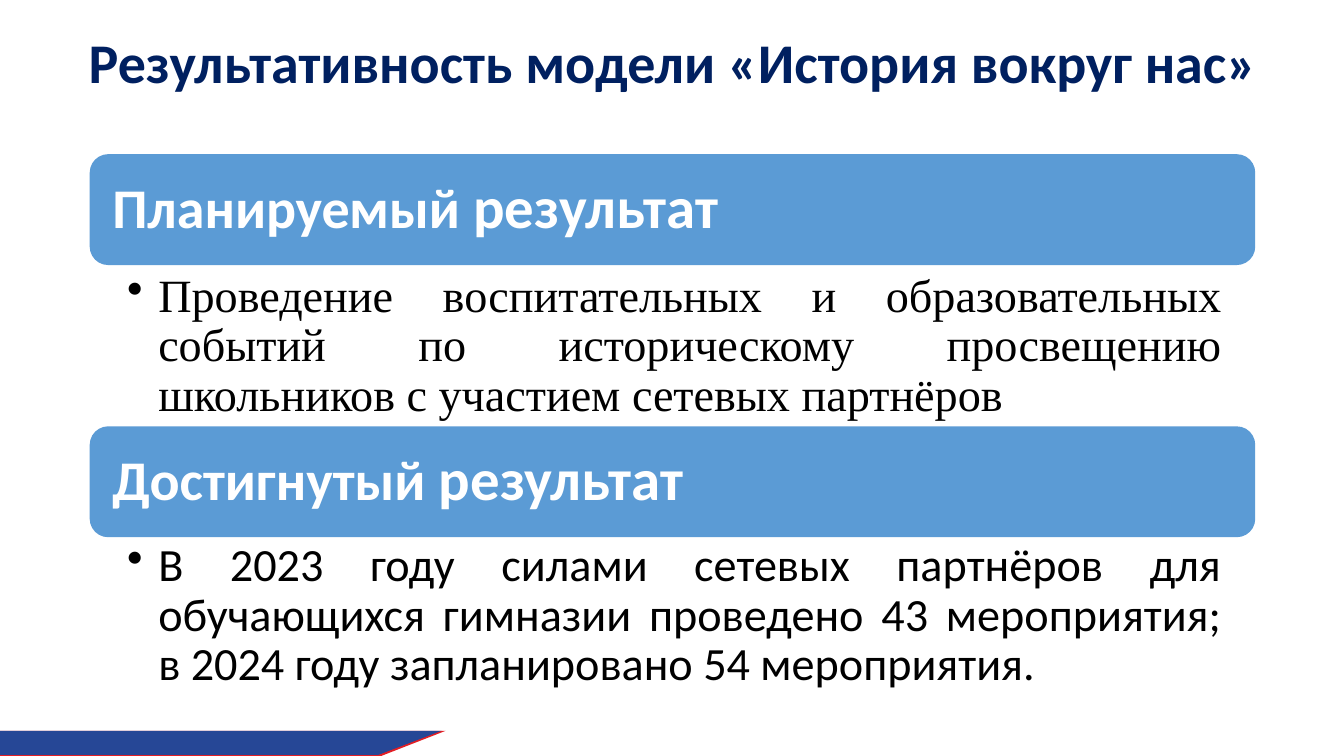
from lxml.etree import SubElement
from pptx import Presentation
from pptx.dml.color import RGBColor
from pptx.enum.shapes import MSO_SHAPE
from pptx.enum.text import MSO_ANCHOR, PP_ALIGN
from pptx.oxml.ns import qn
from pptx.util import Inches, Pt

# Content
TITLE = "Результативность модели «История вокруг нас»"
SECTIONS = [
    {
        "heading": ("Планируемый", " результат"),
        "body": "Проведение воспитательных и образовательных событий по "
                "историческому просвещению школьников с участием сетевых партнёров",
        "font": "Times New Roman", "top": 1.53, "body_top": 2.64, "body_height": 1.57,
    },
    {
        "heading": ("Достигнутый", " результат"),
        "body": "В 2023 году силами сетевых партнёров для обучающихся гимназии "
                "проведено 43 мероприятия; в 2024 году запланировано 54 мероприятия.",
        "font": "Calibri", "top": 4.23, "body_top": 5.31, "body_height": 1.66,
    },
]

# Colours
NAVY = RGBColor(0x00, 0x20, 0x60)
BLUE = RGBColor(0x5B, 0x9B, 0xD5)
WHITE = RGBColor(0xFF, 0xFF, 0xFF)
BLACK = RGBColor(0x00, 0x00, 0x00)
FOOTER_RED = RGBColor(0xE3, 0x1E, 0x24)
FOOTER_BLUE = RGBColor(0x26, 0x47, 0x96)

# Layout: footer bands are colour, top right, bottom right, bottom
FOOTER_TOP = 7.25
FOOTER_BANDS = [(FOOTER_RED, 4.42, 3.78, 7.5), (FOOTER_BLUE, 4.38, 3.75, 7.49)]
LEFT, WIDTH, BAR_HEIGHT = 0.89, 11.56, 1.1
BULLET_INDENT = 0.31

# Formats
TITLE_FORMAT = {"name": "Calibri", "size": Pt(40), "bold": True}
HEADING_SIZES = (40, 42)
BODY_SIZE = 33


def set_fill(shape, color):
    shape.shadow.inherit = False
    shape.fill.solid()
    shape.fill.fore_color.rgb = color
    shape.line.fill.background()


def set_frame(frame, anchor, left, top, right, bottom):
    values = {
        "word_wrap": True, "vertical_anchor": anchor,
        "margin_left": Inches(left), "margin_top": Inches(top),
        "margin_right": Inches(right), "margin_bottom": Inches(bottom),
    }
    for name, value in values.items():
        setattr(frame, name, value)


def add_run(paragraph, text, color, font_format):
    run = paragraph.add_run()
    run.text = text
    run.font.color.rgb = color
    for name, value in font_format.items():
        setattr(run.font, name, value)


def start_paragraph(frame, alignment):
    paragraph = frame.paragraphs[0]
    paragraph.alignment = alignment
    paragraph.line_spacing = 0.9
    return paragraph


def add_bullet(paragraph):
    properties = paragraph._p.get_or_add_pPr()
    properties.set("marL", str(Inches(BULLET_INDENT)))
    properties.set("indent", str(-Inches(BULLET_INDENT)))
    SubElement(properties, qn("a:buChar")).set("char", "•")


def add_footer(slide):
    for color, top_right, bottom_right, bottom in FOOTER_BANDS:
        builder = slide.shapes.build_freeform(0, Inches(FOOTER_TOP))
        corners = [(top_right, FOOTER_TOP), (bottom_right, bottom), (0, bottom)]
        builder.add_line_segments([(Inches(x), Inches(y)) for x, y in corners])
        set_fill(builder.convert_to_shape(), color)


def add_title(slide):
    box = slide.shapes.add_textbox(Inches(0.78), Inches(0.14), Inches(12.4), Inches(1.02))
    set_frame(box.text_frame, MSO_ANCHOR.MIDDLE, 0.1, 0.05, 0.1, 0.05)
    add_run(start_paragraph(box.text_frame, PP_ALIGN.LEFT), TITLE, NAVY, TITLE_FORMAT)


def add_section(slide, section):
    # Heading bar
    bar = slide.shapes.add_shape(
        MSO_SHAPE.ROUNDED_RECTANGLE,
        Inches(LEFT), Inches(section["top"]), Inches(WIDTH), Inches(BAR_HEIGHT))
    set_fill(bar, BLUE)
    set_frame(bar.text_frame, MSO_ANCHOR.MIDDLE, 0.17, 0.17, 0.17, 0.17)
    paragraph = start_paragraph(bar.text_frame, PP_ALIGN.LEFT)
    for text, size in zip(section["heading"], HEADING_SIZES):
        add_run(paragraph, text, WHITE, {"name": "Calibri", "size": Pt(size), "bold": True})

    # Bulleted result
    box = slide.shapes.add_textbox(
        Inches(LEFT), Inches(section["body_top"]),
        Inches(WIDTH), Inches(section["body_height"]))
    set_frame(box.text_frame, MSO_ANCHOR.TOP, 0.37, 0.06, 0.33, 0.06)
    paragraph = start_paragraph(box.text_frame, PP_ALIGN.JUSTIFY)
    add_bullet(paragraph)
    add_run(paragraph, section["body"], BLACK,
            {"name": section["font"], "size": Pt(BODY_SIZE)})


def main():
    presentation = Presentation()
    presentation.slide_width = Inches(13.33)
    presentation.slide_height = Inches(7.5)
    slide = presentation.slides.add_slide(presentation.slide_layouts[6])
    add_footer(slide)
    add_title(slide)
    for section in SECTIONS:
        add_section(slide, section)
    presentation.save("out.pptx")


if __name__ == "__main__":
    main()
